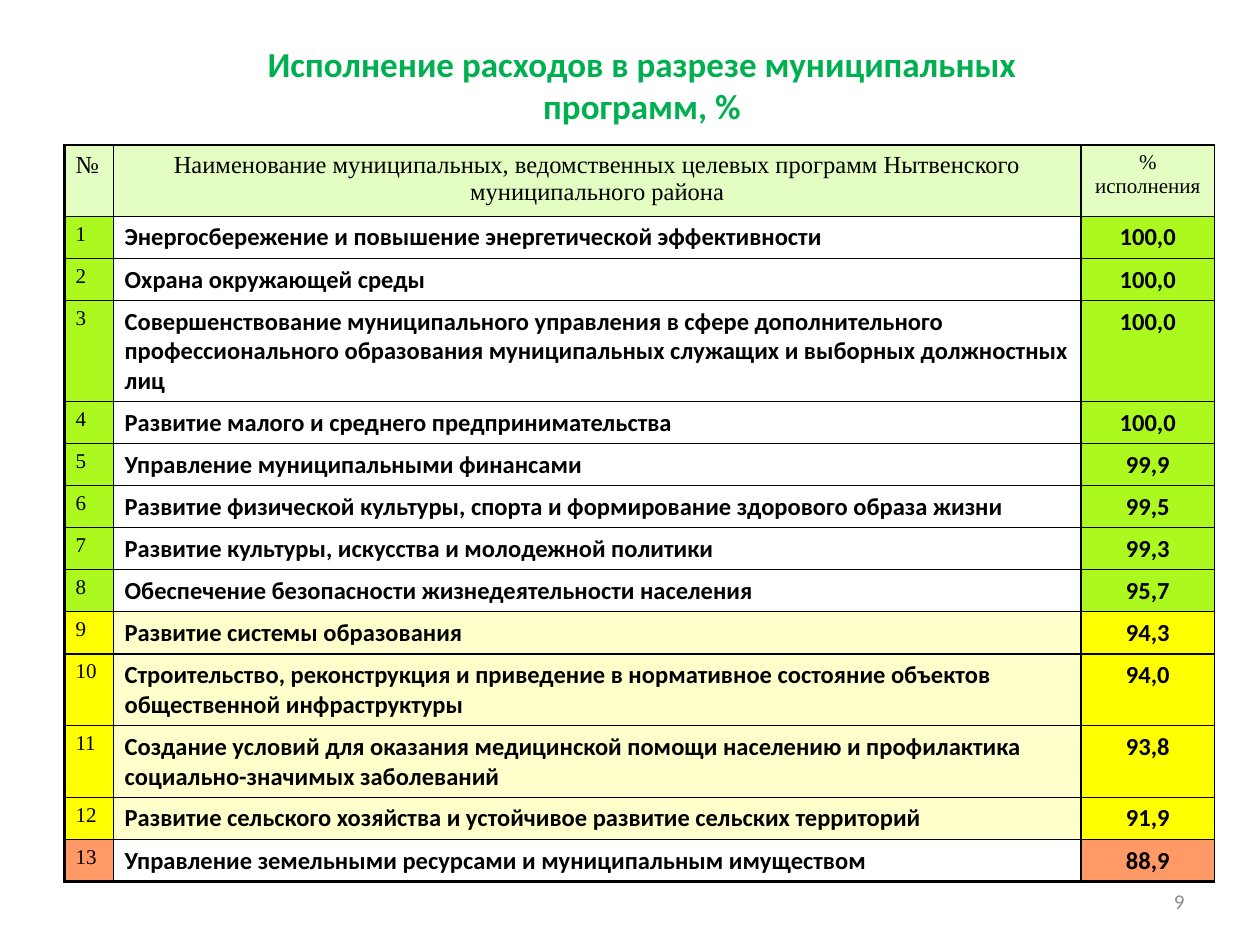
from lxml import etree
from pptx import Presentation
from pptx.dml.color import RGBColor
from pptx.enum import text
from pptx.oxml.ns import qn
from pptx.util import Inches, Pt

COLORS = {
    "title": "00B050", "text": "000000", "page": "8C8C8C", "border": "000000",
    "header": "E3FDC3", "high": "ABF91F", "middle": "FFFF00", "low": "FF9966",
    "white": "FFFFFF", "cream": "FFFFCC",
}
SERIF, SANS = "Times New Roman", "Calibri"
LEFT, CENTER, RIGHT = text.PP_ALIGN.LEFT, text.PP_ALIGN.CENTER, text.PP_ALIGN.RIGHT

TITLE = "Исполнение расходов в разрезе муниципальных программ, %"
PAGE = "9"
HEADER = [
    "№",
    "Наименование муниципальных, ведомственных целевых программ Нытвенского муниципального района",
    "% исполнения",
]
PROGRAMS = [
    ("Энергосбережение и повышение энергетической эффективности", "100,0"),
    ("Охрана окружающей среды", "100,0"),
    ("Совершенствование муниципального управления в сфере дополнительного "
     "профессионального образования муниципальных служащих и выборных должностных лиц", "100,0"),
    ("Развитие малого и среднего предпринимательства", "100,0"),
    ("Управление муниципальными финансами", "99,9"),
    ("Развитие физической культуры, спорта и формирование здорового образа жизни", "99,5"),
    ("Развитие культуры, искусства и молодежной политики", "99,3"),
    ("Обеспечение безопасности жизнедеятельности населения", "95,7"),
    ("Развитие системы образования", "94,3"),
    ("Строительство, реконструкция и приведение в нормативное состояние объектов "
     "общественной инфраструктуры", "94,0"),
    ("Создание условий для оказания медицинской помощи населению и профилактика "
     "социально-значимых заболеваний", "93,8"),
    ("Развитие сельского хозяйства и устойчивое развитие сельских территорий", "91,9"),
    ("Управление земельными ресурсами и муниципальным имуществом", "88,9"),
]
COLUMNS = [0.39, 7.68, 1.06]
HEADER_HEIGHT = 0.53
LINE_HEIGHT, ROW_PADDING, LINE_CHARS = 0.24, 0.09, 75


def write(tf, content, size, font, color, align=LEFT, bold=False):
    tf.text = content
    p = tf.paragraphs[0]
    p.alignment = align
    f = p.runs[0].font
    f.size, f.name, f.bold = Pt(size), font, bold
    f.color.rgb = RGBColor.from_string(COLORS[color])


def add_label(s, box, content, anchor, **style):
    tf = s.shapes.add_textbox(*map(Inches, box)).text_frame
    tf.word_wrap = True
    tf.vertical_anchor = anchor
    write(tf, content, **style)


def set_borders(cell, widths):
    tc_pr = cell._tc.get_or_add_tcPr()
    for i, (side, width) in enumerate(widths.items()):
        ln = etree.Element(qn(f"a:ln{side}"), w=str(Pt(width)))
        fill = etree.SubElement(ln, qn("a:solidFill"))
        etree.SubElement(fill, qn("a:srgbClr"), val=COLORS["border"])
        tc_pr.insert(i, ln)


def row_fills(percent):
    value = float(percent.replace(",", "."))
    if value >= 95:
        return "high", "white", "high"
    if value >= 90:
        return "middle", "cream", "middle"
    return "low", "white", "low"


def row_height(name):
    lines = -(-len(name) // LINE_CHARS)
    return ROW_PADDING + LINE_HEIGHT * lines


def add_program_table(s):
    rows = [HEADER] + [(str(n), *program) for n, program in enumerate(PROGRAMS, 1)]
    heights = [HEADER_HEIGHT] + [row_height(name) for name, _ in PROGRAMS]
    fills = [("header",) * 3] + [row_fills(percent) for _, percent in PROGRAMS]
    header_styles = [(14, SERIF, "text", LEFT), (14, SERIF, "text", CENTER),
                     (12, SERIF, "text", CENTER)]
    body_styles = [(12, SERIF, "text", LEFT), (14, SANS, "text", LEFT, True),
                   (14, SANS, "text", CENTER, True)]

    frame = s.shapes.add_table(len(rows), len(COLUMNS), Inches(0.51), Inches(1.15),
                               Inches(sum(COLUMNS)), Inches(sum(heights)))
    table = frame.table
    table.first_row = table.horz_banding = False
    for column, width in zip(table.columns, COLUMNS):
        column.width = Inches(width)
    for i, row in enumerate(rows):
        table.rows[i].height = Inches(heights[i])
        styles = body_styles if i else header_styles
        for j, content in enumerate(row):
            cell = table.cell(i, j)
            cell.margin_left = cell.margin_right = Inches(0.09)
            write(cell.text_frame, content, *styles[j])
            cell.fill.solid()
            cell.fill.fore_color.rgb = RGBColor.from_string(COLORS[fills[i][j]])
            set_borders(cell, {"L": 1 if j else 2.25, "R": 1, "T": 1,
                               "B": 2.25 if i == len(rows) - 1 else 1})


def main():
    prs = Presentation()
    prs.slide_width, prs.slide_height = Inches(10), Inches(7.5)
    s = prs.slides.add_slide(prs.slide_layouts[6])
    add_label(s, (1.54, 0.13, 7.11, 0.92), TITLE, text.MSO_ANCHOR.BOTTOM,
              size=20, font=SANS, color="title", align=CENTER, bold=True)
    add_label(s, (7.17, 6.95, 2.33, 0.4), PAGE, text.MSO_ANCHOR.MIDDLE,
              size=12, font=SANS, color="page", align=RIGHT)
    add_program_table(s)
    prs.save("out.pptx")


if __name__ == "__main__":
    main()
